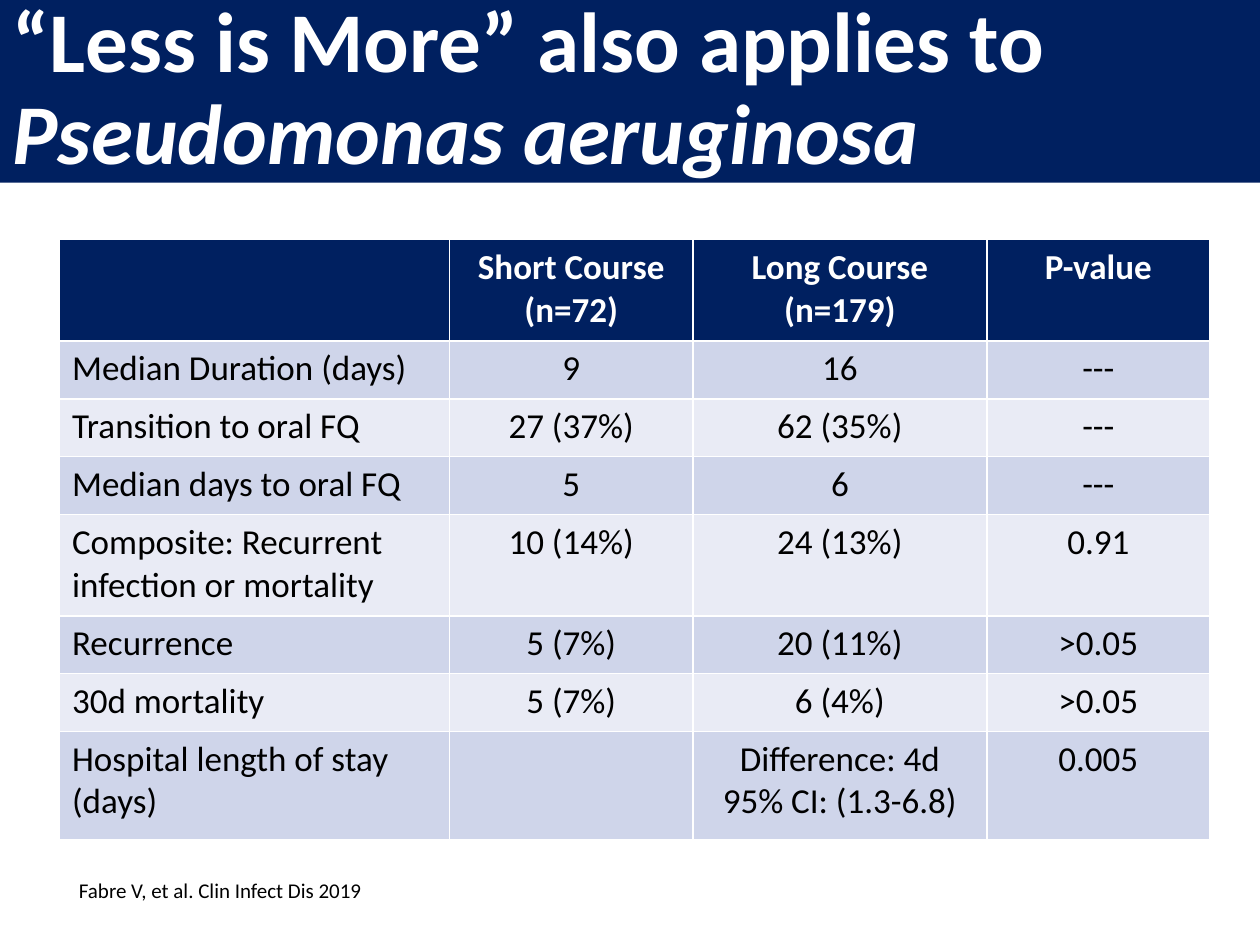
from typing import NamedTuple

from pptx import Presentation
from pptx.dml.color import RGBColor
from pptx.enum.text import MSO_ANCHOR, MSO_AUTO_SIZE, PP_ALIGN
from pptx.util import Pt

NAVY = RGBColor(0x00, 0x20, 0x60)
WHITE = RGBColor(0xFF, 0xFF, 0xFF)
BLACK = RGBColor(0x00, 0x00, 0x00)
BAND_DARK = RGBColor(0xCF, 0xD5, 0xEA)
BAND_LIGHT = RGBColor(0xE9, 0xEB, 0xF5)


class Row(NamedTuple):
    height: float
    label: str
    short: str
    long: str
    p_value: str


COLUMN_WIDTHS = (223, 139, 168, 127.4)
ROWS = (
    Row(58, "", "Short Course\n(n=72)", "Long Course\n(n=179)", "P-value"),
    Row(33, "Median Duration (days)", "9", "16", "---"),
    Row(33, "Transition to oral FQ", "27 (37%)", "62 (35%)", "---"),
    Row(33, "Median days to oral FQ", "5", "6", "---"),
    Row(58, "Composite: Recurrent infection or mortality",
        "10 (14%)", "24 (13%)", "0.91"),
    Row(33, "Recurrence", "5 (7%)", "20 (11%)", ">0.05"),
    Row(33, "30d mortality", "5 (7%)", "6 (4%)", ">0.05"),
    Row(62, "Hospital length of stay (days)", "",
        "Difference: 4d\n95% CI: (1.3-6.8)", "0.005"),
)


def style_font(font, size: float, color: RGBColor, **extra) -> None:
    values = {"name": "Calibri", "size": Pt(size), **extra}
    for name, value in values.items():
        setattr(font, name, value)
    font.color.rgb = color


def place(s, left: float, top: float, width: float, height: float) -> None:
    box = {"left": left, "top": top, "width": width, "height": height}
    for name, value in box.items():
        setattr(s, name, Pt(value))


def add_title(slide) -> None:
    s = slide.shapes.title
    place(s, 0, 0, 720, 104.4)
    s.fill.solid()
    s.fill.fore_color.rgb = NAVY
    tf = s.text_frame
    tf.auto_size = MSO_AUTO_SIZE.NONE
    tf.vertical_anchor = MSO_ANCHOR.MIDDLE
    p = tf.paragraphs[0]
    p.alignment = PP_ALIGN.LEFT
    p.line_spacing = 0.9
    for text, italic in (("“Less is More” also applies to ", False),
                         ("Pseudomonas aeruginosa", True)):
        r = p.add_run()
        r.text = text
        style_font(r.font, 48.6, WHITE, bold=True, italic=italic)


def fill_cell(cell, text: str, fill: RGBColor, color: RGBColor,
              bold: bool, align: PP_ALIGN) -> None:
    cell.fill.solid()
    cell.fill.fore_color.rgb = fill
    cell.text_frame.text = text
    for p in cell.text_frame.paragraphs:
        p.alignment = align
        style_font(p.font, 20, color, bold=bold)
        for r in p.runs:
            style_font(r.font, 20, color, bold=bold)


def add_results_table(slide) -> None:
    """The default table style supplies the white cell borders."""
    table = slide.shapes.add_table(
        len(ROWS), len(COLUMN_WIDTHS), Pt(34), Pt(137),
        Pt(sum(COLUMN_WIDTHS)), Pt(sum(row.height for row in ROWS))).table
    for column, width in zip(table.columns, COLUMN_WIDTHS):
        column.width = Pt(width)
    for i, (height, *texts) in enumerate(ROWS):
        table.rows[i].height = Pt(height)
        header = i == 0
        band = BAND_DARK if i % 2 else BAND_LIGHT
        for j, text in enumerate(texts):
            fill_cell(table.cell(i, j), text,
                      NAVY if header else band,
                      WHITE if header else BLACK, header,
                      PP_ALIGN.CENTER if j else PP_ALIGN.LEFT)


def add_citation(slide) -> None:
    s = slide.shapes.add_textbox(Pt(38), Pt(498), Pt(178), Pt(21.8))
    tf = s.text_frame
    tf.word_wrap = False
    tf.auto_size = MSO_AUTO_SIZE.SHAPE_TO_FIT_TEXT
    r = tf.paragraphs[0].add_run()
    r.text = "Fabre V, et al. Clin Infect Dis 2019"
    style_font(r.font, 12, BLACK)


def main() -> None:
    prs = Presentation()
    prs.slide_width, prs.slide_height = Pt(720), Pt(540)
    slide = prs.slides.add_slide(prs.slide_layouts.get_by_name("Title Only"))
    add_title(slide)
    add_results_table(slide)
    add_citation(slide)
    prs.save("out.pptx")


if __name__ == "__main__":
    main()
